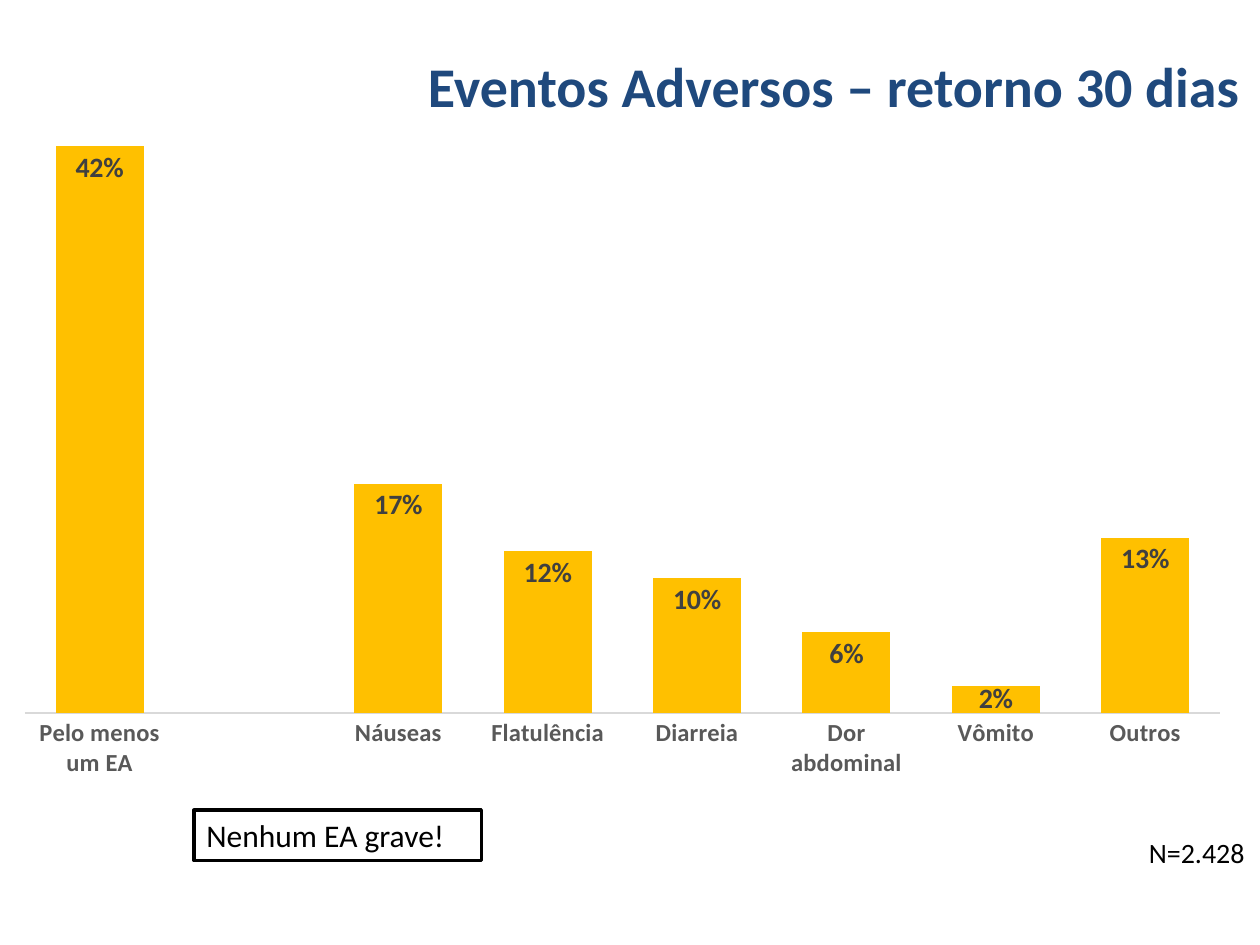
from lxml import etree
from pptx import Presentation
from pptx.chart.data import CategoryChartData
from pptx.dml.color import RGBColor
from pptx.enum.chart import XL_CHART_TYPE as ChartType, XL_LABEL_POSITION as LabelPos, XL_TICK_MARK as TickMark
from pptx.enum.shapes import MSO_SHAPE as Preset
from pptx.enum.text import MSO_ANCHOR as Anchor, PP_ALIGN as Align
from pptx.oxml.ns import qn
from pptx.util import Inches, Pt

EVENTS = {
    "Pelo menos um EA": 0.42,
    "": None,
    "Náuseas": 0.17,
    "Flatulência": 0.12,
    "Diarreia": 0.10,
    "Dor abdominal": 0.06,
    "Vômito": 0.02,
    "Outros": 0.13,
}


def rgb(color):
    """Turn a hex string into a colour."""
    return RGBColor.from_string(color)


def style_font(font, size, color, bold=False):
    """Apply the slide's typeface with a size, colour and weight."""
    font.name = "Calibri"
    font.size = Pt(size)
    font.bold = bold
    font.color.rgb = rgb(color)


def write(shape, wording, size, color, bold=False, align=Align.LEFT):
    """Set one line of text in a shape and format it."""
    frame = shape.text_frame
    frame.text = wording
    frame.paragraphs[0].alignment = align
    style_font(frame.paragraphs[0].runs[0].font, size, color, bold)
    return frame


def place_title(slide, left, top, width, height):
    """Move the title placeholder into its box and fill it."""
    title = slide.shapes.title
    title.left, title.top, title.width, title.height = map(Inches, (left, top, width, height))
    frame = write(title, "Eventos Adversos – retorno 30 dias", 32, "1F497D", True, Align.RIGHT)
    frame.vertical_anchor = Anchor.TOP
    frame.margin_right = Inches(0.16)


def fix_plot_area(chart, **fractions):
    """Pin the inner plot area to fractions of the chart box."""
    plot_area = chart._chartSpace.chart.plotArea
    for old in plot_area.findall(qn("c:layout")):
        plot_area.remove(old)
    layout = etree.Element(qn("c:layout"))
    manual = etree.SubElement(layout, qn("c:manualLayout"))
    settings = {"layoutTarget": "inner", "xMode": "edge", "yMode": "edge", **fractions}
    for tag, setting in settings.items():
        etree.SubElement(manual, qn(f"c:{tag}")).set("val", str(setting))
    plot_area.insert(0, layout)


def label_columns(columns):
    """Show the rates inside the columns, centred in the shortest one."""
    labels = columns.data_labels
    labels.show_value = True
    labels.position = LabelPos.INSIDE_END
    labels.number_format, labels.number_format_is_linked = "0%", False
    style_font(labels.font, 16, "404040", True)
    vomiting = columns.points[list(EVENTS).index("Vômito")].data_label
    style_font(vomiting.font, 16, "404040", True)
    vomiting.position = LabelPos.CENTER


def place_events_chart(slide, left, top, width, height):
    """Draw the column chart of adverse events."""
    chart_data = CategoryChartData(number_format="0%")
    chart_data.categories = list(EVENTS)
    chart_data.add_series("Series 1", list(EVENTS.values()))
    box = map(Inches, (left, top, width, height))
    chart = slide.shapes.add_chart(ChartType.COLUMN_CLUSTERED, *box, chart_data).chart
    chart.has_legend = False
    chart.has_title = False
    style_font(chart.font, 10, "000000")
    fix_plot_area(chart, x=0.02, y=0.02, w=0.96, h=0.87)

    rates = chart.value_axis
    rates.minimum_scale, rates.maximum_scale = 0, 0.45
    rates.has_major_gridlines = False
    rates.visible = False

    names = chart.category_axis
    names.major_tick_mark = names.minor_tick_mark = TickMark.NONE
    names.format.line.color.rgb = rgb("D9D9D9")
    names.format.line.width = Pt(0.75)
    style_font(names.tick_labels.font, 14, "595959", True)

    plot = chart.plots[0]
    plot.gap_width, plot.overlap = 70, -27
    plot.vary_by_categories = False
    columns = plot.series[0]
    columns.format.fill.solid()
    columns.format.fill.fore_color.rgb = rgb("FFC000")
    label_columns(columns)


def place_sample_size(slide, left, top, width, height):
    """Write the number of participants."""
    sample = slide.shapes.add_textbox(*map(Inches, (left, top, width, height)))
    write(sample, "N=2.428", 16, "000000").word_wrap = True


def place_safety_note(slide, left, top, width, height):
    """Draw the framed note about serious events."""
    note = slide.shapes.add_shape(Preset.RECTANGLE, *map(Inches, (left, top, width, height)))
    note.shadow.inherit = False
    note.fill.solid()
    note.fill.fore_color.rgb = rgb("FFFFFF")
    note.line.color.rgb = rgb("000000")
    note.line.width = Pt(2)
    frame = write(note, "Nenhum EA grave!", 18, "000000")
    frame.word_wrap = True
    frame.vertical_anchor = Anchor.MIDDLE


def main():
    """Build the slide and save it."""
    deck = Presentation()
    deck.slide_width, deck.slide_height = Inches(10), Inches(7.5)
    slide = deck.slides.add_slide(deck.slide_layouts.get_by_name("Title Only"))
    place_title(slide, 0, 0.36, 10, 0.71)
    place_events_chart(slide, 0, 0.73, 9.88, 5.54)
    place_sample_size(slide, 9.02, 6.58, 1.08, 0.44)
    place_safety_note(slide, 1.54, 6.43, 2.28, 0.4)
    deck.save("out.pptx")


if __name__ == "__main__":
    main()
